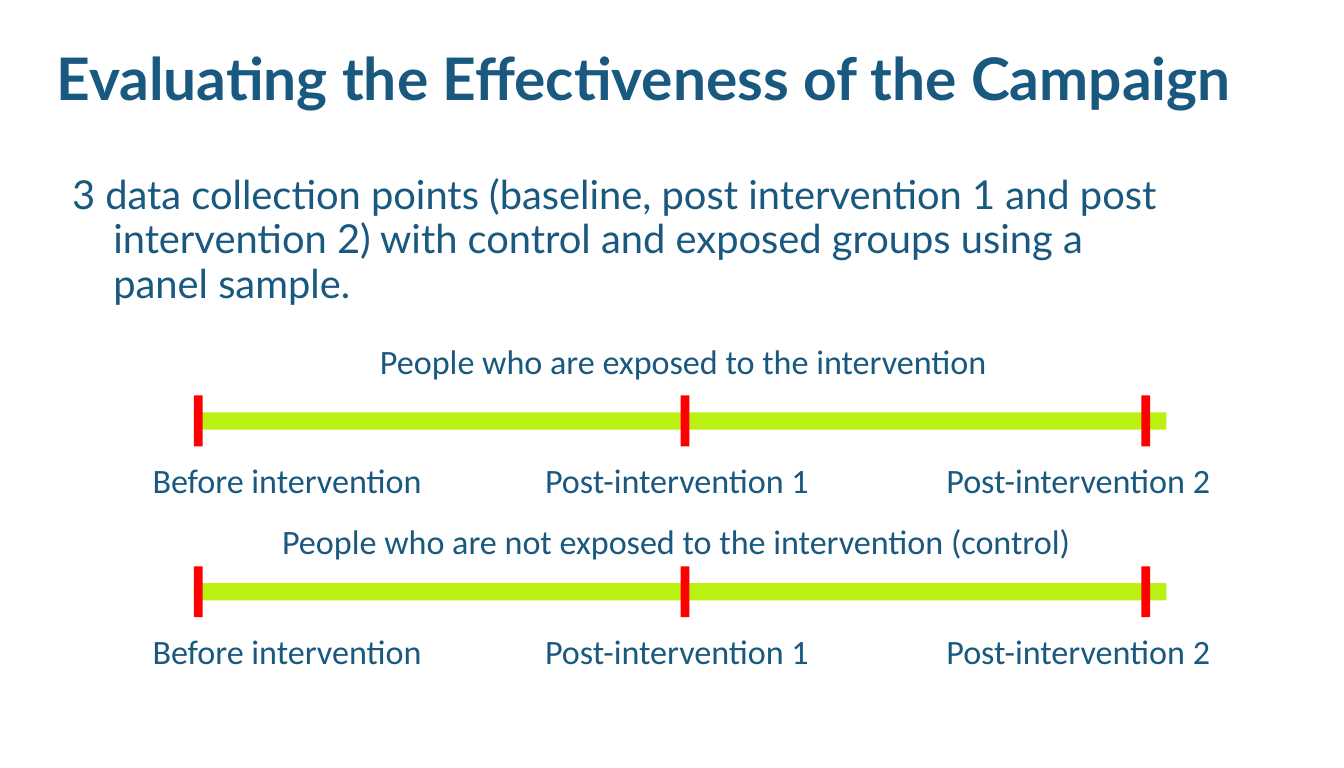
from pptx import Presentation
from pptx import util as u
from pptx.dml.color import RGBColor
from pptx.enum import shapes, text

NAVY, LIME, RED = "195980", "BBF013", "FF0000"
BAR_HEIGHT, TICK_WIDTH, TICK_HEIGHT, LABEL_HEIGHT = 0.18, 0.09, 0.53, 0.53
MILESTONES = [
    ("Before intervention", 0, -0.53, 3.22),
    ("Post-intervention 1", 5.07, 3.56, 3.2),
    ("Post-intervention 2", 9.87, 7.74, 3.2),
]


def color(value):
    """Turn a hex string into a colour."""
    return RGBColor.from_string(value)


def add_text(page, box, words, size, font="Calibri", bold=False):
    """Add a text box with one paragraph and return its frame and paragraph."""
    frame = page.shapes.add_textbox(*map(u.Inches, box)).text_frame
    para = frame.paragraphs[0]
    para.text = words
    para.font.name, para.font.size, para.font.bold = font, u.Pt(size), bold
    para.font.color.rgb = color(NAVY)
    return frame, para


def add_label(page, box, words):
    """Add an unwrapped timeline label."""
    frame, _ = add_text(page, box, words, 25.6)
    frame.word_wrap = False
    frame.auto_size = text.MSO_AUTO_SIZE.SHAPE_TO_FIT_TEXT


def add_block(page, box, fill):
    """Add a plain filled rectangle."""
    block = page.shapes.add_shape(shapes.MSO_SHAPE.RECTANGLE, *map(u.Inches, box))
    block.shadow.inherit = False
    block.fill.solid()
    block.fill.fore_color.rgb = color(fill)
    block.line.fill.background()


def add_title(page, box, words):
    """Add the centred slide title."""
    frame, para = add_text(page, box, words, 44, "Lato", True)
    frame.word_wrap = True
    frame.vertical_anchor = text.MSO_ANCHOR.MIDDLE
    frame.margin_left = frame.margin_right = frame.margin_top = frame.margin_bottom = 0
    para.alignment = text.PP_ALIGN.CENTER
    para.line_spacing = 0.93


def add_body(page, box, words):
    """Add the body paragraph with a hanging indent."""
    frame, para = add_text(page, box, words, 29.9, "Lato")
    frame.word_wrap = True
    frame.margin_left = frame.margin_right = frame.margin_bottom = 0
    frame.margin_top = u.Inches(0.03)
    para.line_spacing = 0.93
    para.space_after = u.Pt(16.2)
    properties = para._p.get_or_add_pPr()
    properties.set("marL", str(u.Inches(0.43)))
    properties.set("indent", str(-u.Inches(0.43)))


def add_timeline(page, box, caption, caption_box):
    """Add a captioned bar with a tick and a label for each milestone."""
    left, top, width, height = box
    add_block(page, (left, top + (height - BAR_HEIGHT) / 2, width, BAR_HEIGHT), LIME)
    for words, tick, label, label_width in MILESTONES:
        add_block(page, (left + tick, top, TICK_WIDTH, height), RED)
        add_label(page, (left + label, top + 0.62, label_width, LABEL_HEIGHT), words)
    add_label(page, caption_box, caption)


def main():
    """Build and save the slide."""
    deck = Presentation()
    deck.slide_width, deck.slide_height = u.Inches(14), u.Inches(8)
    page = deck.slides.add_slide(deck.slide_layouts[6])
    add_title(page, (0, 0.18, 13.42, 1.33), "Evaluating the Effectiveness of the Campaign")
    add_body(page, (0.75, 1.78, 11.45, 5.28),
             "3 data collection points (baseline, post intervention 1 and post "
             "intervention 2) with control and exposed groups using a panel sample.")
    add_timeline(page, (2.02, 4.12, 10.13, TICK_HEIGHT),
                 "People who are exposed to the intervention",
                 (3.86, 3.5, 7.21, LABEL_HEIGHT))
    add_timeline(page, (2.02, 5.9, 10.13, TICK_HEIGHT),
                 "People who are not exposed to the intervention (control)",
                 (2.84, 5.37, 9.13, LABEL_HEIGHT))
    deck.save("out.pptx")


if __name__ == "__main__":
    main()
